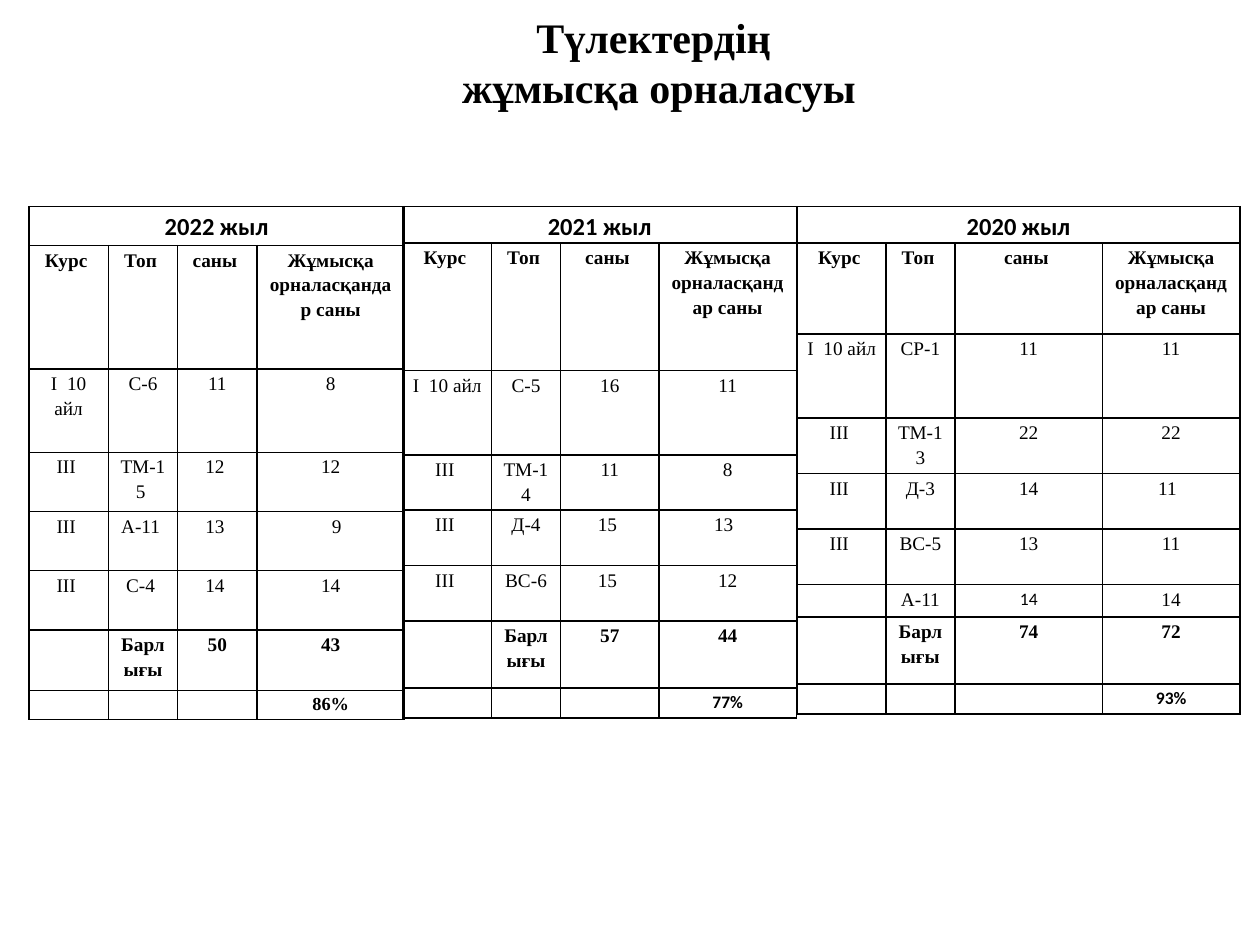
from lxml import etree
from pptx import Presentation
from pptx.dml.color import RGBColor
from pptx.enum.text import MSO_ANCHOR, MSO_AUTO_SIZE, PP_ALIGN
from pptx.oxml.ns import qn
from pptx.util import Inches, Pt

CENTER, RIGHT = PP_ALIGN.CENTER, PP_ALIGN.RIGHT
TOP = MSO_ANCHOR.TOP
NO_AUTOFIT = MSO_AUTO_SIZE.NONE
TITLE_ONLY = 5
BLACK = "000000"
SERIF, SANS = "Times New Roman", "Calibri"

HEADINGS = ["Курс ", "Топ ", "саны ", "Жұмысқа орналасқандар саны"]
FIRST, THIRD, TOTAL = "І  10 айл", "ІІІ ", "Барлығы"
TABLE_TOP = 1.64

# "shifted" is the row whose last figure is right-aligned;
# "special" holds the format of single cells by (row, column).
YEARS = [
    {
        "title": "2022 жыл", "left": 0.23, "shifted": 4,
        "widths": [0.63, 0.55, 0.63, 1.17],
        "heights": [0.31, 0.98, 0.66, 0.47, 0.47, 0.47, 0.48, 0.23],
        "rows": [
            [FIRST, "С-6", "11", "8"],
            [THIRD, "ТМ-15 ", "12 ", "12"],
            [THIRD, "А-11 ", "13 ", "9"],
            [THIRD, "С-4 ", "14 ", "14"],
            ["", TOTAL, "50", "43"],
            ["", "", "", "86%"],
        ],
        "special": {(7, 3): {"size": 10.5}},
    },
    {
        "title": "2021 жыл", "left": 3.2, "shifted": 4,
        "widths": [0.7, 0.55, 0.78, 1.09],
        "heights": [0.29, 1.01, 0.67, 0.44, 0.44, 0.44, 0.53, 0.24],
        "rows": [
            [FIRST, "С-5", "16", "11"],
            [THIRD, "ТМ-14", "11", "8"],
            [THIRD, "Д-4", "15 ", "13"],
            [THIRD, "ВС-6", "15 ", "12"],
            ["", TOTAL, "57", "44"],
            ["", "", "", "77%"],
        ],
        "special": {(7, 3): {"size": 10, "font": SANS}},
    },
    {
        "title": "2020 жыл", "left": 6.33, "shifted": 4,
        "widths": [0.7, 0.55, 1.17, 1.09],
        "heights": [0.29, 0.72, 0.67, 0.44, 0.44, 0.44, 0.26, 0.53, 0.24],
        "rows": [
            [FIRST, "СР-1", "11", "11"],
            [THIRD, "ТМ-13", "22", "22"],
            [THIRD, "Д-3", "14", "11"],
            [THIRD, "ВС-5", "13", "11"],
            ["", "А-11", "14", "14"],
            ["", TOTAL, "74", "72"],
            ["", "", "", "93%"],
        ],
        "special": {(6, 2): {"size": 10, "font": SANS},
                    (8, 3): {"size": 10, "font": SANS}},
    },
]


def color(value):
    return RGBColor.from_string(value)


def write_text(paragraph, text, size=11, font=SERIF, bold=False,
               align=CENTER, spacing=1.15, indent=0):
    paragraph.alignment = align
    paragraph.line_spacing = spacing
    if indent:
        properties = paragraph._p.get_or_add_pPr()
        properties.set("marL", "0")
        properties.set("indent", str(Inches(indent)))
    if not text:
        # Keeps an empty cell from growing to the default text size
        etree.SubElement(paragraph._p, qn("a:endParaRPr"), sz=str(size * 100))
        return
    run = paragraph.add_run()
    run.text = text
    run.font.size = Pt(size)
    run.font.name = font
    run.font.bold = bold
    run.font.color.rgb = color(BLACK)


def add_title(slide, left, top, width, height):
    title = slide.shapes.title
    title.left, title.top = Inches(left), Inches(top)
    title.width, title.height = Inches(width), Inches(height)
    frame = title.text_frame
    frame.auto_size = NO_AUTOFIT
    frame.word_wrap = True
    frame.vertical_anchor = TOP
    frame.margin_top = Inches(0.09)
    for number, line in enumerate(["Түлектердің ", "жұмысқа орналасуы"]):
        paragraph = frame.add_paragraph() if number else frame.paragraphs[0]
        paragraph.space_before = Pt(0)
        write_text(paragraph, line, size=24, bold=True, spacing=1.0, indent=0.3)


def format_cell(cell):
    """Give the cell its insets, an empty fill and thin black borders."""
    cell.margin_left = cell.margin_right = Inches(0.07)
    cell.margin_top, cell.margin_bottom = Inches(0.01), 0
    cell.vertical_anchor = TOP
    properties = cell._tc.get_or_add_tcPr()
    for side in ("lnL", "lnR", "lnT", "lnB"):
        line = etree.SubElement(properties, qn(f"a:{side}"), w=str(Pt(1)))
        fill = etree.SubElement(line, qn("a:solidFill"))
        etree.SubElement(fill, qn("a:srgbClr"), val=BLACK)
    cell.fill.background()


def add_year_table(slide, year, left, top):
    widths, heights = year["widths"], year["heights"]
    table = slide.shapes.add_table(
        len(heights), len(widths), Inches(left), Inches(top),
        Inches(sum(widths)), Inches(sum(heights))).table
    table.first_row = table.horz_banding = False
    for column, width in zip(table.columns, widths):
        column.width = Inches(width)
    for row, height in zip(table.rows, heights):
        row.height = Inches(height)
    for cell in table.iter_cells():
        format_cell(cell)

    heading = table.cell(0, 0)
    heading.merge(table.cell(0, len(widths) - 1))
    write_text(heading.text_frame.paragraphs[0], year["title"],
               size=14, font=SANS, bold=True)

    bold_rows = (1, len(heights) - 2, len(heights) - 1)
    for row, texts in enumerate([HEADINGS] + year["rows"], start=1):
        for column, text in enumerate(texts):
            cell = table.cell(row, column)
            style = {"bold": row in bold_rows}
            if (row, column) == (year["shifted"], len(widths) - 1):
                style["align"] = RIGHT
                cell.margin_right = Inches(0.5)
            style.update(year["special"].get((row, column), {}))
            write_text(cell.text_frame.paragraphs[0], text, **style)


def main():
    presentation = Presentation()
    presentation.slide_width = Inches(10)
    presentation.slide_height = Inches(7.5)
    slide = presentation.slides.add_slide(presentation.slide_layouts[TITLE_ONLY])
    add_title(slide, 2.5, 0, 5.16, 1.51)
    for year in YEARS:
        add_year_table(slide, year, year["left"], TABLE_TOP)
    presentation.save("out.pptx")


if __name__ == "__main__":
    main()
